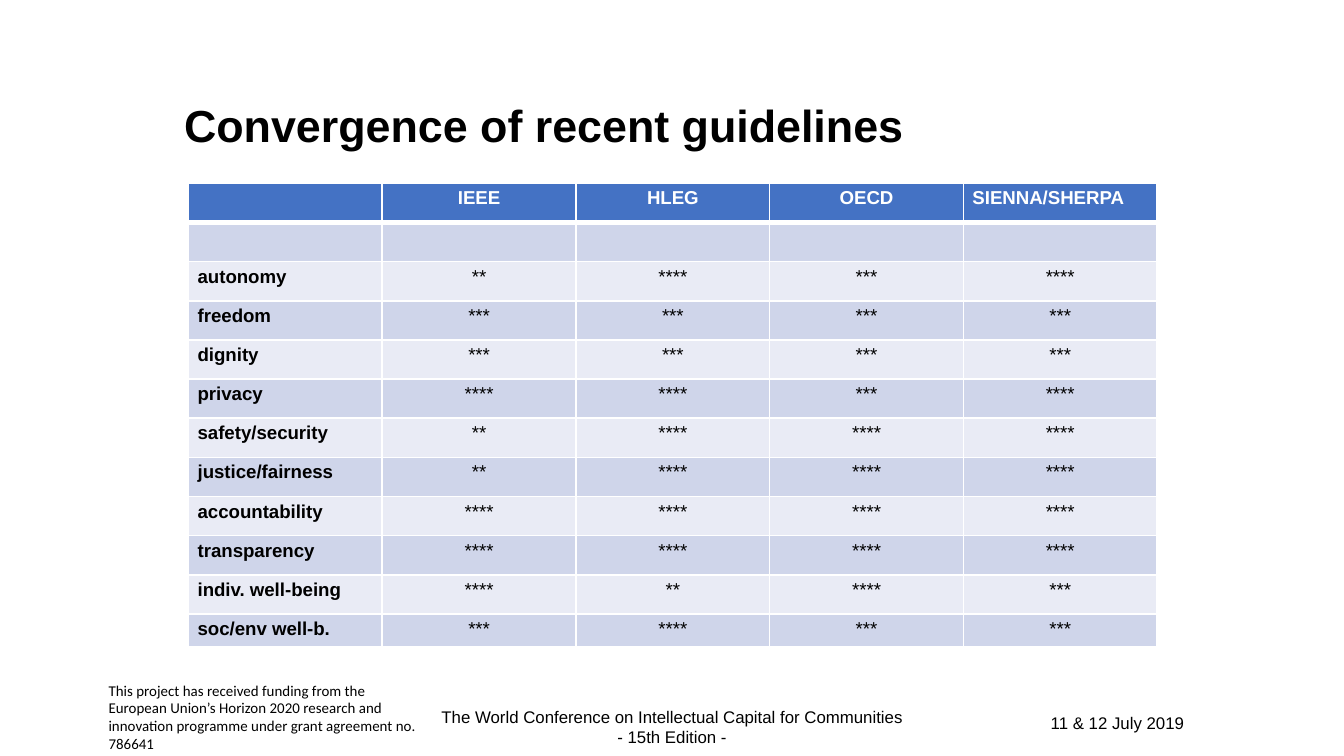
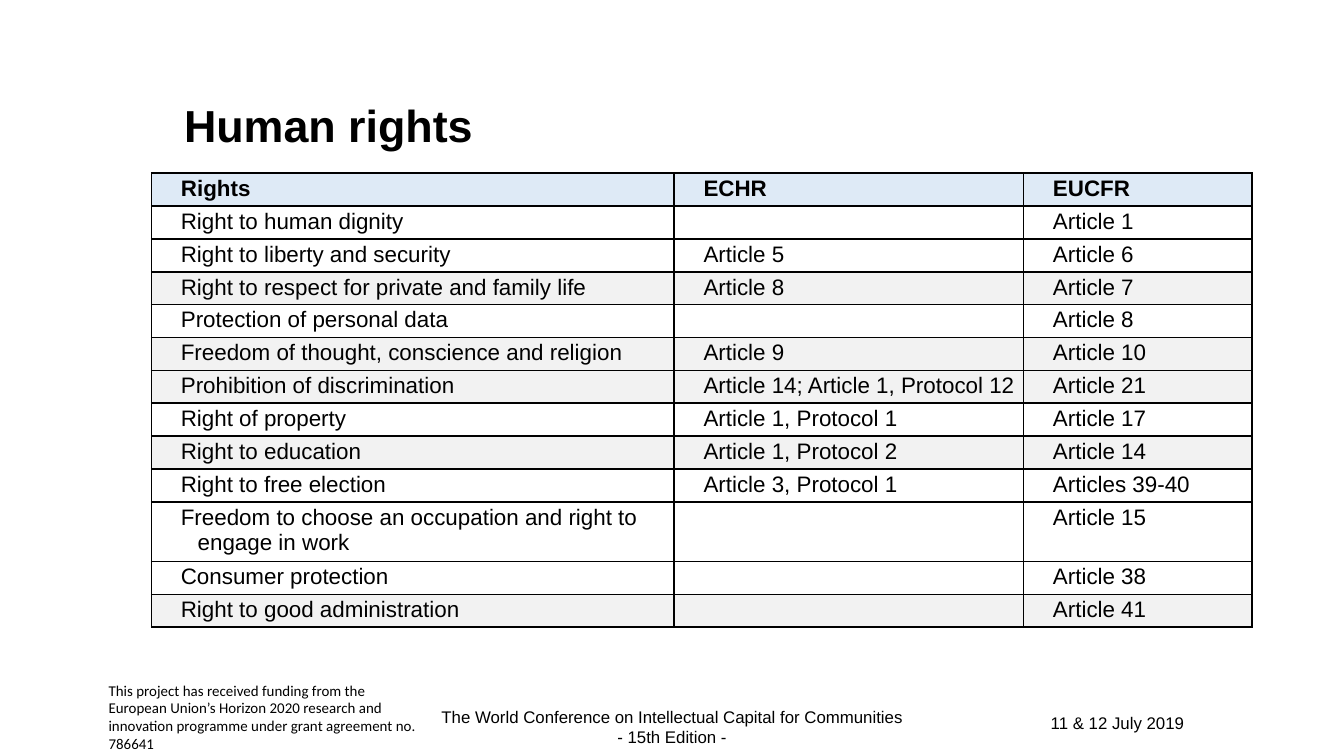
from lxml import etree
from pptx import Presentation
from pptx.dml.color import RGBColor
from pptx.enum import text
from pptx.oxml import ns
from pptx.util import Pt

BLACK, WHITE = "000000", "FFFFFF"
BLUE, BAND_DARK, BAND_LIGHT = "4472C4", "CFD5EA", "E9EBF5"
PALE_BLUE, GREY = "DEEAF6", "F2F2F2"
LEFT, CENTER = text.PP_ALIGN.LEFT, text.PP_ALIGN.CENTER

GUIDELINE_HEADS = ["", "IEEE", "HLEG", "OECD", "SIENNA/SHERPA"]
GUIDELINE_STARS = [
    ("autonomy", 2, 4, 3, 4),
    ("freedom", 3, 3, 3, 3),
    ("dignity", 3, 3, 3, 3),
    ("privacy", 4, 4, 3, 4),
    ("safety/security", 2, 4, 4, 4),
    ("justice/fairness", 2, 4, 4, 4),
    ("accountability", 4, 4, 4, 4),
    ("transparency", 4, 4, 4, 4),
    ("indiv. well-being", 4, 2, 4, 3),
    ("soc/env well-b.", 3, 4, 3, 3),
]
RIGHTS = [
    ("Rights", "ECHR", "EUCFR"),
    ("Right to human dignity", "", "Article 1"),
    ("Right to liberty and security", "Article 5", "Article 6"),
    ("Right to respect for private and family life", "Article 8", "Article 7"),
    ("Protection of personal data", "", "Article 8"),
    ("Freedom of thought, conscience and religion", "Article 9", "Article 10"),
    ("Prohibition of discrimination", "Article 14; Article 1, Protocol 12", "Article 21"),
    ("Right of property", "Article 1, Protocol 1", "Article 17"),
    ("Right to education", "Article 1, Protocol 2", "Article 14"),
    ("Right to free election", "Article 3, Protocol 1", "Articles 39-40"),
    ("Freedom to choose an occupation and right to engage in work", "", "Article 15"),
    ("Consumer protection", "", "Article 38"),
    ("Right to good administration", "", "Article 41"),
]
GREY_ROWS = {3, 5, 6, 8, 12}
LONG_ROW = 10


def rgb(color):
    return RGBColor.from_string(color)


def set_font(p, size, name="Arial", color=BLACK, bold=False):
    f = p.font
    f.size, f.name, f.bold = Pt(size), name, bold
    f.color.rgb = rgb(color)


def add_text(s, box, lines, size, name="Arial", align=LEFT, wrap=False):
    tf = s.shapes.add_textbox(*map(Pt, box)).text_frame
    tf.word_wrap = wrap
    if not wrap:
        tf.auto_size = text.MSO_AUTO_SIZE.SHAPE_TO_FIT_TEXT
    for i, line in enumerate(lines):
        p = tf.add_paragraph() if i else tf.paragraphs[0]
        p.text, p.alignment = line, align
        set_font(p, size, name)


def add_footer(s):
    add_text(s, (555.8, 378, 87.1, 18), ["11 & 12 July 2019"], 9)
    add_text(s, (226.8, 375.1, 266.4, 28.8),
             ["The World Conference on Intellectual Capital for Communities\n"
              "- 15th Edition -"], 9, align=CENTER)
    add_text(s, (51.1, 361.4, 189.4, 32.4),
             ["This project has received funding from the",
              "European Union’s Horizon 2020 research and innovation programme "
              "under grant agreement no. 786641"], 8, "Calibri", wrap=True)


def add_slide(prs, title):
    s = prs.slides.add_slide(prs.slide_layouts[5])
    add_footer(s)
    sp = s.shapes.title
    sp.left, sp.top, sp.width, sp.height = map(Pt, (91.4, 29.5, 579.6, 78.5))
    tf = sp.text_frame
    tf.text = title
    tf.vertical_anchor = text.MSO_ANCHOR.MIDDLE
    p = tf.paragraphs[0]
    p.alignment, p.line_spacing = LEFT, 0.9
    set_font(p, 24, bold=True)
    return s


def add_grid(s, left, top, widths, heights):
    frame = s.shapes.add_table(len(heights), len(widths), Pt(left), Pt(top),
                               Pt(sum(widths)), Pt(sum(heights)))
    table = frame.table
    table.first_row = table.horz_banding = False
    for column, width in zip(table.columns, widths):
        column.width = Pt(width)
    for row, height in zip(table.rows, heights):
        row.height = Pt(height)
    return table


def set_borders(cell, color, bottom=1):
    tcPr = cell._tc.get_or_add_tcPr()
    for side, width in (("L", 1), ("R", 1), ("T", 1), ("B", bottom)):
        ln = etree.SubElement(tcPr, ns.qn("a:ln" + side), w=str(Pt(width)))
        fill = etree.SubElement(ln, ns.qn("a:solidFill"))
        etree.SubElement(fill, ns.qn("a:srgbClr"), val=color)


def fill_cell(cell, words, size, margins, fill=None, color=BLACK, bold=False):
    cell.margin_left = cell.margin_right = Pt(margins[0])
    cell.margin_top = cell.margin_bottom = Pt(margins[1])
    if fill:
        cell.fill.solid()
        cell.fill.fore_color.rgb = rgb(fill)
    else:
        cell.fill.background()
    p = cell.text_frame.paragraphs[0]
    p.text = words
    set_font(p, size, color=color, bold=bold)
    if not words:
        p._p.get_or_add_endParaRPr().set("sz", str(size * 100))
    return p


def indent(p, left, first=0):
    pPr = p._p.get_or_add_pPr()
    pPr.set("marL", str(Pt(left)))
    pPr.set("indent", str(Pt(first)))


def add_guidelines(s):
    rows = [GUIDELINE_HEADS, [""] * len(GUIDELINE_HEADS)]
    rows += [[name] + ["*" * n for n in stars] for name, *stars in GUIDELINE_STARS]
    heights = [21] * (len(rows) - 1) + [17.5]
    table = add_grid(s, 101, 98.2, [103.8] * len(GUIDELINE_HEADS), heights)
    for i, row in enumerate(rows):
        head = i == 0
        fill = BLUE if head else BAND_DARK if i % 2 else BAND_LIGHT
        for j, words in enumerate(row):
            cell = table.cell(i, j)
            set_borders(cell, WHITE, bottom=3 if head else 1)
            p = fill_cell(cell, words, 10, (4.9, 2.5), fill,
                          WHITE if head else BLACK, head or j == 0)
            p.alignment = LEFT if j == 0 or (head and j == 4) else CENTER


def add_rights(s):
    heights = [30.8 if i == LONG_ROW else 17 for i in range(len(RIGHTS))]
    table = add_grid(s, 81.2, 92.8, [280, 187.2, 122.2], heights)
    for i, row in enumerate(RIGHTS):
        fill = PALE_BLUE if i == 0 else GREY if i in GREY_ROWS else None
        for j, words in enumerate(row):
            cell = table.cell(i, j)
            set_borders(cell, BLACK)
            p = fill_cell(cell, words, 12, (2.1, 1.6), fill, bold=i == 0)
            p.space_after = Pt(2)
            if i and j == 0:
                indent(p, 22.6, -9)
            else:
                indent(p, 13.6)


def main():
    prs = Presentation()
    prs.slide_width, prs.slide_height = Pt(720), Pt(405)
    add_guidelines(add_slide(prs, "Convergence of recent guidelines"))
    add_rights(add_slide(prs, "Human rights"))
    prs.save("out.pptx")


if __name__ == "__main__":
    main()
